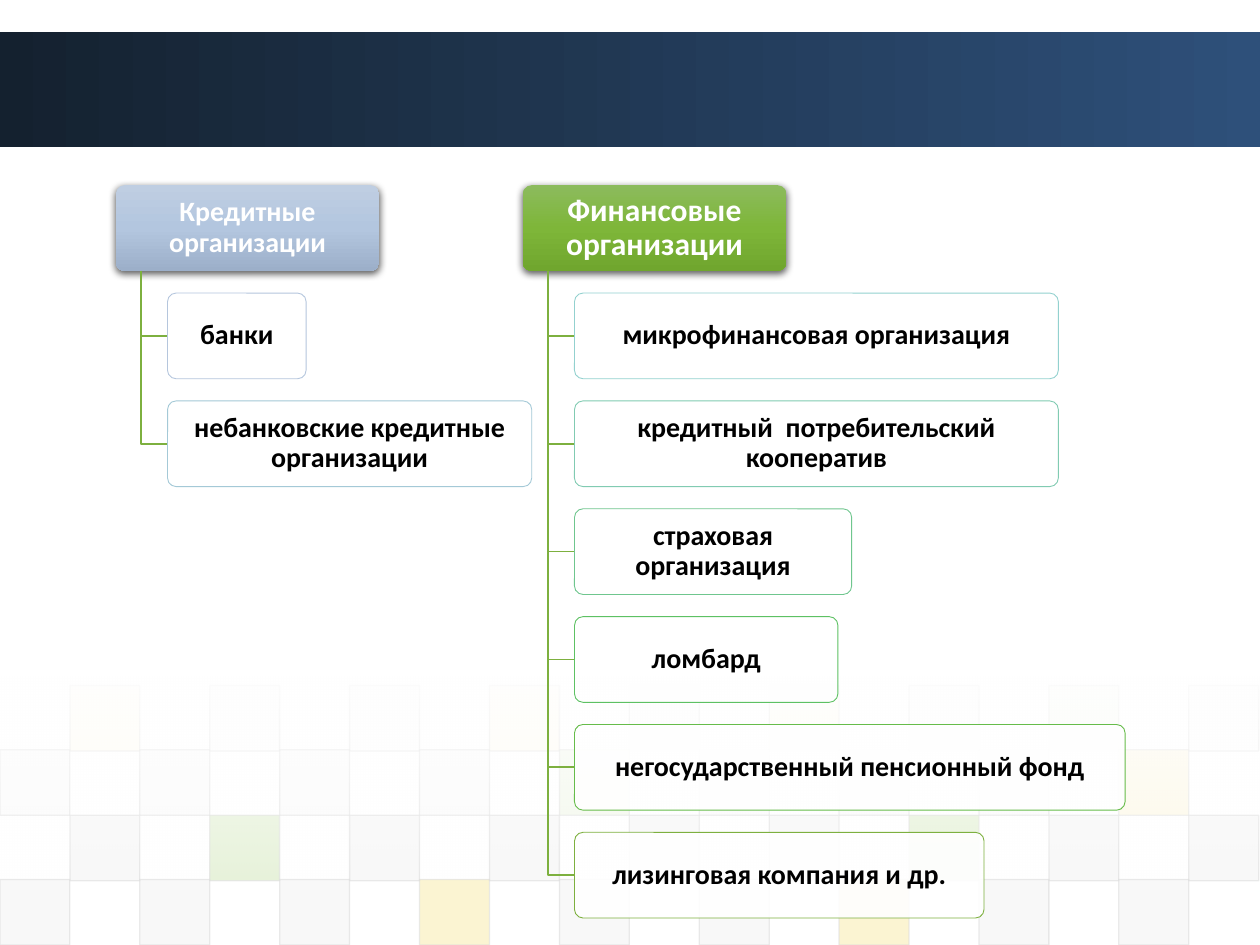
from lxml import etree
from pptx import Presentation
from pptx.dml.color import RGBColor
from pptx.enum import shapes, text
from pptx.oxml.ns import qn
from pptx.util import Inches, Pt

COLORS = {
    "white": "FFFFFF", "black": "000000", "connector": "7DB03F",
    "band_start": "14212F", "band_end": "2E507A",
    "tile_line": "DDDDDD",
    "D": "DDDDDD", "E": "EAEAEA", "G": "8AC246", "Y": "EFC821",
}

# Mosaic rows: top, opacity in percent, one letter per column ("." is a gap)
MOSAIC = [
    (5.44, 5, ".Y.E.E.Y.D.Y.E.G.E"),
    (5.95, 10, "D.D.D.D.G.D.D.D.Y."),
    (6.47, 20, ".D.G.D.D.D.D.G.D.D"),
    (6.98, 20, "D.D.D.Y.D.D.Y.D.D."),
]

# Branches: left, heading, heading size, heading gradient, (member, width, outline)
BRANCHES = [
    (0.92, "Кредитные организации", 16, ("BFCEE2", "B3C6DF", "9CAFC9"), [
        ("банки", 1.1, "B5C6DD"),
        ("небанковские кредитные организации", 2.89, "A4C9D7"),
    ]),
    (4.15, "Финансовые организации", 18, ("8CBB5D", "7EB639", "70A62E"), [
        ("микрофинансовая организация", 3.84, "93D1CF"),
        ("кредитный  потребительский кооператив", 3.84, "81CBB2"),
        ("страховая организация", 2.2, "6FC68E"),
        ("ломбард", 2.09, "5DC163"),
        ("негосударственный пенсионный фонд", 4.37, "66BC4A"),
        ("лизинговая компания и др.", 3.25, "7DB03F"),
    ]),
]
TOP, HEADING_WIDTH, BOX_HEIGHT, ROW_PITCH = 1.47, 2.09, 0.68, 0.856
STEM_INDENT, MEMBER_INDENT = 0.2, 0.41


def rgb(color):
    return RGBColor.from_string(color)


def set_alpha(color_element, percent):
    etree.SubElement(color_element, qn("a:alpha")).set("val", str(percent * 1000))


def fill_solid(shape, color, opacity):
    shape.fill.solid()
    shape.fill.fore_color.rgb = rgb(color)
    set_alpha(shape.fill._xPr.find(f"{qn('a:solidFill')}/{qn('a:srgbClr')}"), opacity)


def fill_gradient(shape, stops, downward):
    """Fill with evenly spaced (color, opacity) stops."""
    shape.fill.gradient()
    shape.fill.gradient_angle = 270 if downward else 0
    stop_list = shape._element.spPr.find(f".//{qn('a:gsLst')}")
    for default_stop in list(stop_list):
        stop_list.remove(default_stop)
    for i, (color, opacity) in enumerate(stops):
        stop = etree.SubElement(stop_list, qn("a:gs"), pos=str(100000 * i // (len(stops) - 1)))
        set_alpha(etree.SubElement(stop, qn("a:srgbClr"), val=color), opacity)


def set_outline(shape, color, width):
    shape.line.color.rgb = rgb(color)
    shape.line.width = Pt(width)


def add_box(slide, left, top, width, height, kind=shapes.MSO_SHAPE.RECTANGLE):
    box = slide.shapes.add_shape(kind, Inches(left), Inches(top), Inches(width), Inches(height))
    box.shadow.inherit = False
    box.line.fill.background()
    return box


def add_rounded_box(slide, left, top, width):
    box = add_box(slide, left, top, width, BOX_HEIGHT, shapes.MSO_SHAPE.ROUNDED_RECTANGLE)
    box.adjustments[0] = 0.1
    return box


def add_drop_shadow(shape):
    effects = shape._element.spPr.find(qn("a:effectLst"))
    shadow = etree.SubElement(effects, qn("a:outerShdw"), blurRad=str(Pt(4.5)),
                              dist=str(Pt(1.5)), dir="5400000", rotWithShape="0")
    set_alpha(etree.SubElement(shadow, qn("a:srgbClr"), val=COLORS["black"]), 63)


def write_text(shape, content, size=16, color="black", inset=0.03):
    frame = shape.text_frame
    frame.word_wrap = True
    frame.vertical_anchor = text.MSO_ANCHOR.MIDDLE
    frame.margin_left = frame.margin_right = Inches(inset)
    frame.margin_top = frame.margin_bottom = Inches(inset - 0.01)
    paragraph = frame.paragraphs[0]
    paragraph.alignment = text.PP_ALIGN.CENTER
    paragraph.line_spacing = 0.9
    run = paragraph.add_run()
    run.text = content
    run.font.name = "Calibri"
    run.font.size = Pt(size)
    run.font.bold = True
    run.font.color.rgb = rgb(COLORS[color])


def add_elbow(slide, left, top, right, bottom):
    builder = slide.shapes.build_freeform(Inches(left), Inches(top))
    builder.add_line_segments([(Inches(left), Inches(bottom)),
                               (Inches(right), Inches(bottom))], close=False)
    elbow = builder.convert_to_shape()
    elbow.shadow.inherit = False
    elbow.fill.background()
    set_outline(elbow, COLORS["connector"], 1)


def add_backdrop(slide):
    # Title band
    band = add_box(slide, 0, 0.25, 10, 0.92)
    fill_gradient(band, [(COLORS["band_start"], 100), (COLORS["band_end"], 100)], downward=False)
    # Mosaic
    for top, opacity, row in MOSAIC:
        for column, letter in enumerate(row):
            if letter == ".":
                continue
            tile = add_box(slide, column * 0.555, top, 0.555, 0.52)
            fill_solid(tile, COLORS[letter], opacity)
            set_outline(tile, COLORS["tile_line"], 0.75)
            set_alpha(tile.line._ln.find(f".//{qn('a:srgbClr')}"), 60)
    # Veil that fades the mosaic out upwards
    veil = add_box(slide, 0, 5.37, 10, 1.62)
    fill_gradient(veil, [(COLORS["white"], 90), (COLORS["white"], 0)], downward=True)


def add_branch(slide, left, heading, size, gradient, members):
    heading_box = add_rounded_box(slide, left, TOP, HEADING_WIDTH)
    fill_gradient(heading_box, [(color, 100) for color in gradient], downward=True)
    add_drop_shadow(heading_box)
    write_text(heading_box, heading, size=size, color="white", inset=0.03 if size == 16 else 0.04)

    member_left = left + MEMBER_INDENT
    for row, (member, width, outline) in enumerate(members, start=1):
        top = TOP + row * ROW_PITCH
        add_elbow(slide, left + STEM_INDENT, TOP + BOX_HEIGHT, member_left, top + BOX_HEIGHT / 2)
        member_box = add_rounded_box(slide, member_left, top, width)
        fill_solid(member_box, COLORS["white"], 90)
        set_outline(member_box, outline, 0.5)
        write_text(member_box, member)


def main():
    deck = Presentation()
    deck.slide_width, deck.slide_height = Inches(10), Inches(7.5)
    slide = deck.slides.add_slide(deck.slide_layouts[6])
    add_backdrop(slide)
    for branch in BRANCHES:
        add_branch(slide, *branch)
    deck.save("out.pptx")


if __name__ == "__main__":
    main()
